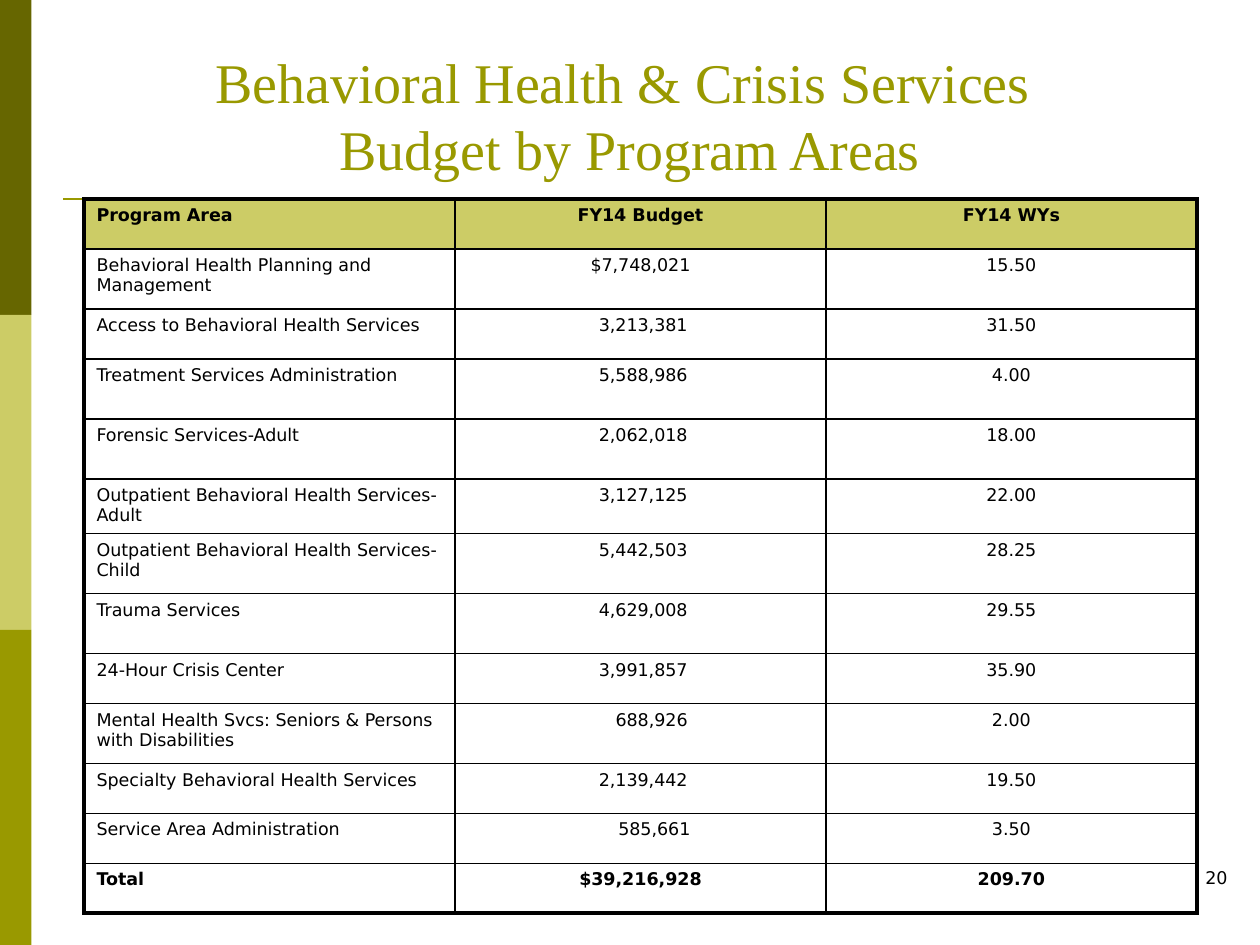
from typing import NamedTuple

from lxml import etree
from pptx import Presentation
from pptx.dml.color import RGBColor
from pptx.enum.shapes import MSO_CONNECTOR, MSO_SHAPE
from pptx.enum.text import MSO_ANCHOR, MSO_AUTO_SIZE, PP_ALIGN
from pptx.oxml.ns import qn
from pptx.util import Pt

LEFT, CENTER, RIGHT = PP_ALIGN.LEFT, PP_ALIGN.CENTER, PP_ALIGN.RIGHT
TOP, BOTTOM = MSO_ANCHOR.TOP, MSO_ANCHOR.BOTTOM
NO_AUTOFIT = MSO_AUTO_SIZE.NONE
RECTANGLE = MSO_SHAPE.RECTANGLE
STRAIGHT = MSO_CONNECTOR.STRAIGHT

COLORS = {
    "dark": "666600",
    "light": "CCCC66",
    "olive": "999900",
    "black": "000000",
}
BODY_FONT = "DejaVu Sans"
TITLE_FONT = "Times New Roman"

SLIDE_WIDTH, SLIDE_HEIGHT = 720, 540
BAND_WIDTH, BAND_HEIGHT = 18, 180
TABLE_LEFT, TABLE_TOP, COLUMN_WIDTH = 48, 113.8, 212
CELL_INSET = 7.2
OUTER_BORDER, INNER_BORDER = 2.25, 1
LOW, MEDIUM, HIGH = 28.5, 30.9, 34.3


class Program(NamedTuple):
    area: str
    budget: str
    work_years: str
    height: float
    budget_indent: float = 3.2


PROGRAMS = [
    Program("Program Area", "FY14 Budget", "FY14 WYs", LOW, 0),
    Program("Behavioral Health Planning and Management", "$7,748,021", "15.50", HIGH, 0),
    Program("Access to Behavioral Health Services", "3,213,381", "31.50", LOW),
    Program("Treatment Services Administration", "5,588,986", "4.00", HIGH),
    Program("Forensic Services-Adult", "2,062,018", "18.00", HIGH),
    Program("Outpatient Behavioral Health Services-Adult", "3,127,125", "22.00", MEDIUM),
    Program("Outpatient Behavioral Health Services-Child", "5,442,503", "28.25", HIGH),
    Program("Trauma Services", "4,629,008", "29.55", HIGH),
    Program("24-Hour Crisis Center", "3,991,857", "35.90", LOW),
    Program("Mental Health Svcs: Seniors & Persons with Disabilities", "688,926", "2.00", HIGH, 12.7),
    Program("Specialty Behavioral Health Services", "2,139,442", "19.50", LOW),
    Program("Service Area Administration", "585,661", "3.50", LOW, 15.9),
    Program("Total", "$39,216,928", "209.70", LOW, 0),
]


def rgb(name: str) -> RGBColor:
    return RGBColor.from_string(COLORS[name])


def write(frame, text: str, *, size: float = 10, font: str = BODY_FONT,
          color: str = "black", bold: bool = False, align=LEFT) -> None:
    frame.word_wrap = True
    paragraph = frame.paragraphs[0]
    paragraph.text = text
    paragraph.alignment = align
    for run in paragraph.runs:
        run.font.size = Pt(size)
        run.font.name = font
        run.font.bold = bold
        run.font.color.rgb = rgb(color)


def draw_band(slide, index: int, color: str) -> None:
    band = slide.shapes.add_shape(
        RECTANGLE, 0, Pt(index * BAND_HEIGHT), Pt(BAND_WIDTH), Pt(BAND_HEIGHT))
    band.shadow.inherit = False
    band.fill.solid()
    band.fill.fore_color.rgb = rgb(color)
    band.line.fill.background()


def draw_rule(slide, left: float, right: float, top: float) -> None:
    rule = slide.shapes.add_connector(STRAIGHT, Pt(left), Pt(top), Pt(right), Pt(top))
    rule.line.color.rgb = rgb("olive")
    rule.line.width = Pt(1.5)
    etree.SubElement(rule._element.spPr, qn("a:effectLst"))


def set_borders(cell, widths: dict[str, float]) -> None:
    properties = cell._tc.get_or_add_tcPr()
    for side, width in widths.items():
        border = etree.SubElement(properties, qn(f"a:ln{side}"), w=str(Pt(width)))
        fill = etree.SubElement(border, qn("a:solidFill"))
        etree.SubElement(fill, qn("a:srgbClr"), val=COLORS["black"])


def draw_budget_table(slide, programs: list[Program]) -> None:
    last_row, last_column = len(programs) - 1, 2
    table = slide.shapes.add_table(
        len(programs), 3, Pt(TABLE_LEFT), Pt(TABLE_TOP),
        Pt(3 * COLUMN_WIDTH), Pt(sum(p.height for p in programs))).table
    table.first_row = table.horz_banding = False
    for column in table.columns:
        column.width = Pt(COLUMN_WIDTH)
    for row, program in enumerate(programs):
        table.rows[row].height = Pt(program.height)
        entries = (program.area, program.budget, program.work_years)
        for column, entry in enumerate(entries):
            cell = table.cell(row, column)
            on_edge = {"L": column == 0, "R": column == last_column,
                       "T": row == 0, "B": row == last_row}
            set_borders(cell, {side: OUTER_BORDER if outer else INNER_BORDER
                               for side, outer in on_edge.items()})
            if row == 0:
                cell.fill.solid()
                cell.fill.fore_color.rgb = rgb("light")
            else:
                cell.fill.background()
            cell.vertical_anchor = TOP
            indent = program.budget_indent if column == 1 else 0
            cell.margin_left = Pt(CELL_INSET + indent)
            write(cell.text_frame, entry, bold=row in (0, last_row),
                  align=CENTER if column else LEFT)


def main() -> None:
    deck = Presentation()
    deck.slide_width, deck.slide_height = Pt(SLIDE_WIDTH), Pt(SLIDE_HEIGHT)
    slide = deck.slides.add_slide(deck.slide_layouts[5])

    for index, color in enumerate(("dark", "light", "olive")):
        draw_band(slide, index, color)
    draw_rule(slide, 36, 672, TABLE_TOP)

    page_number = slide.shapes.add_textbox(Pt(678), Pt(492), Pt(30.5), Pt(36))
    write(page_number.text_frame, "20", align=RIGHT)

    title = slide.shapes.title
    title.left, title.top, title.width, title.height = Pt(78), Pt(24.5), Pt(564), Pt(83)
    title.text_frame.auto_size = NO_AUTOFIT
    title.text_frame.vertical_anchor = BOTTOM
    write(title.text_frame,
          "Behavioral Health & Crisis Services \vBudget by Program Areas",
          size=32, font=TITLE_FONT, color="olive", align=CENTER)

    draw_budget_table(slide, PROGRAMS)
    deck.save("out.pptx")


if __name__ == "__main__":
    main()
